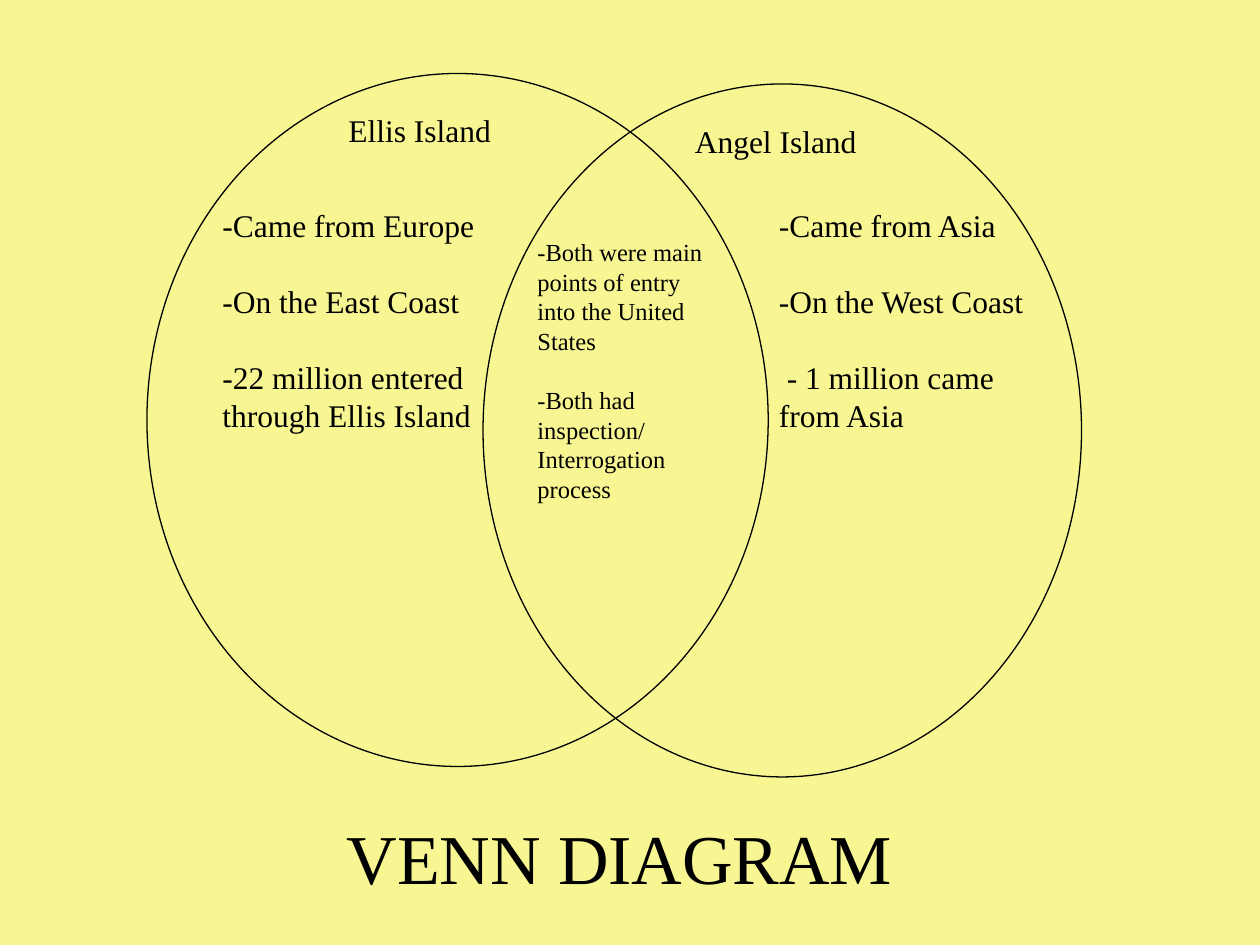
import pptx
import pptx.util
import pptx.dml.color
import pptx.enum.shapes
import pptx.enum.text

Pt = pptx.util.Pt
INK = "000000"
PAPER = "F8F692"


def tint(code):
    """Turn a hex string into a colour."""
    return pptx.dml.color.RGBColor.from_string(code)


def apply(item, form):
    """Set each attribute named in a dict of format values."""
    for name, value in form.items():
        setattr(item, name, value)


def ring(slide, box):
    """Draw one unfilled circle of the diagram."""
    kind = pptx.enum.shapes.MSO_SHAPE.OVAL
    shape = slide.shapes.add_shape(kind, *map(Pt, box))
    shape.shadow.inherit = False
    shape.fill.background()
    shape.line.color.rgb = tint(INK)
    shape.line.width = Pt(0.75)


def label(slide, box, size, lines, align="LEFT"):
    """Write lines of text, each given with the number of line gaps after it."""
    frame = slide.shapes.add_textbox(*map(Pt, box)).text_frame
    frame.word_wrap = True
    pitch = round(size * 1.205, 1)
    for index, (text, gap) in enumerate(lines):
        para = frame.add_paragraph() if index else frame.paragraphs[0]
        apply(para, {
            "alignment": getattr(pptx.enum.text.PP_ALIGN, align),
            "line_spacing": Pt(pitch),
            "space_after": Pt(pitch * gap),
        })
        run = para.add_run()
        run.text = text
        apply(run.font, {"name": "Times New Roman", "size": Pt(size)})
        run.font.color.rgb = tint(INK)


def main():
    """Build the Venn diagram slide."""
    deck = pptx.Presentation()
    apply(deck, {"slide_width": Pt(720), "slide_height": Pt(540)})
    slide = deck.slides.add_slide(deck.slide_layouts[6])
    slide.background.fill.solid()
    slide.background.fill.fore_color.rgb = tint(PAPER)

    ring(slide, (84, 42, 355, 396))
    ring(slide, (276, 48, 342, 396))

    label(slide, (192, 60, 120, 29), 18, [("Ellis Island", 0)])
    label(slide, (390, 66, 108, 29), 18, [("Angel Island", 0)])
    label(slide, (168, 462, 372, 55), 40, [("VENN DIAGRAM", 0)], "CENTER")
    label(slide, (120, 114, 162, 138), 18, [
        ("-Came from Europe", 1),
        ("-On the East Coast", 1),
        ("-22 million entered through Ellis Island", 0),
    ])
    label(slide, (438, 114, 156, 181), 18, [
        ("-Came from Asia", 1),
        ("-On the West Coast", 1),
        (" - 1 million came from Asia", 0),
    ])
    label(slide, (300, 132, 120, 160), 14, [
        ("-Both were main points of entry into the United States", 1),
        ("-Both had inspection/", 0),
        ("Interrogation process", 0),
    ])
    deck.save("out.pptx")


if __name__ == "__main__":
    main()
